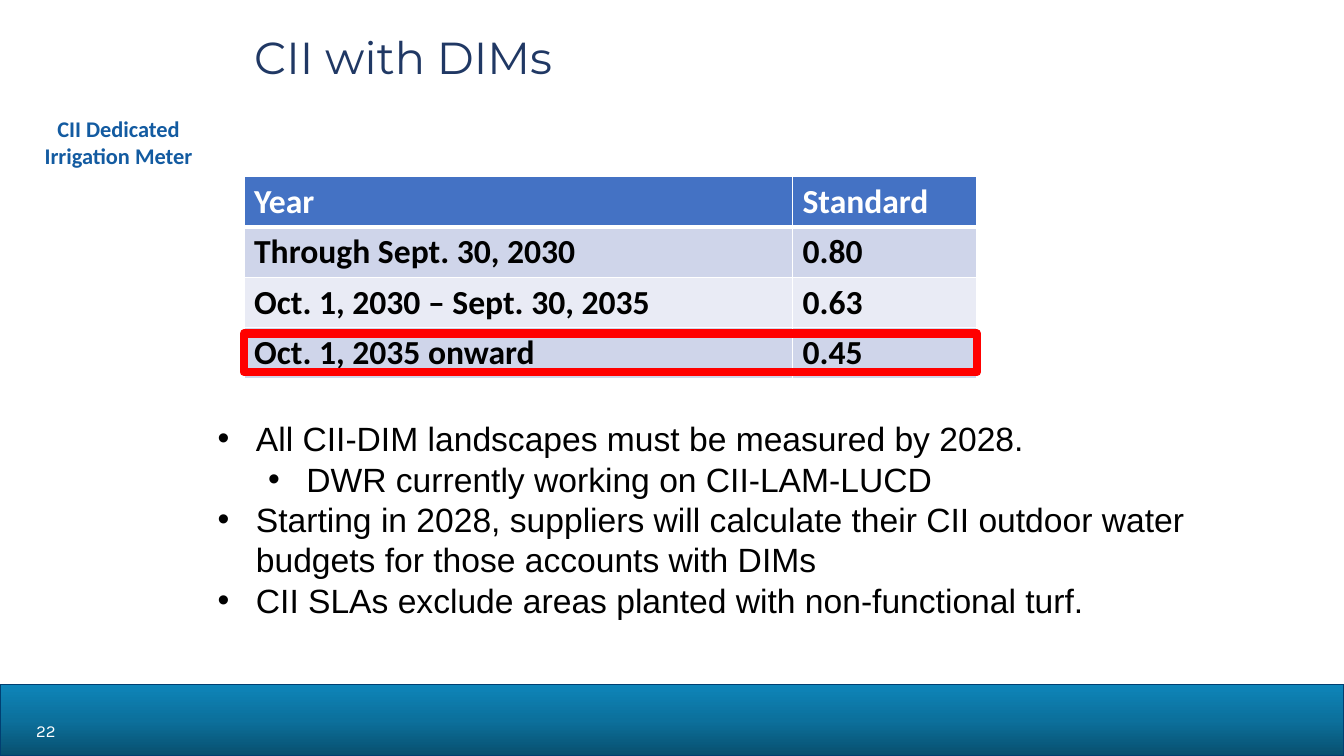
from copy import deepcopy
from dataclasses import dataclass

from lxml.etree import SubElement
from pptx import Presentation
from pptx.dml.color import RGBColor
from pptx.enum.shapes import MSO_SHAPE
from pptx.enum.text import MSO_ANCHOR, PP_ALIGN
from pptx.oxml.ns import qn
from pptx.util import Inches, Pt


@dataclass
class Box:
    left: float
    top: float
    width: float
    height: float

    def emu(self) -> list:
        return [Inches(v) for v in (self.left, self.top, self.width, self.height)]


@dataclass
class Style:
    font: str
    size: float
    color: str
    bold: bool = False


@dataclass
class Bullet:
    text: str
    level: int = 0


@dataclass
class StandardRow:
    cells: tuple
    fill: str
    color: str = "000000"
    bottom_border: float = 1


TITLE = Style("Montserrat", 32, "203864")
BODY = Style("Arial", 24, "000000")
CAPTION = Style("Calibri", 16, "135BA1", True)
PAGE_NUMBER = Style("Karla", 12, "FFFFFF")

STANDARDS = [
    StandardRow(("Year", "Standard"), "4472C4", "FFFFFF", 3),
    StandardRow(("Through Sept. 30, 2030", "0.80"), "CFD5EA"),
    StandardRow(("Oct. 1, 2030 – Sept. 30, 2035", "0.63"), "E9EBF5"),
    StandardRow(("Oct. 1, 2035 onward", "0.45"), "CFD5EA"),
]
COLUMN_WIDTHS = (5.44, 1.83)
ROW_HEIGHT = 0.5

BULLETS = [
    Bullet("All CII-DIM landscapes must be measured by 2028."),
    Bullet("DWR currently working on CII-LAM-LUCD", 1),
    Bullet("Starting in 2028, suppliers will calculate their CII outdoor water "
           "budgets for those accounts with DIMs"),
    Bullet("CII SLAs exclude areas planted with non-functional turf."),
]


def rgb(value: str) -> RGBColor:
    return RGBColor.from_string(value)


def add_run(paragraph, text: str, style: Style) -> None:
    run = paragraph.add_run()
    run.text = text
    run.font.name = style.font
    run.font.size = Pt(style.size)
    run.font.bold = style.bold
    run.font.color.rgb = rgb(style.color)


def add_text_box(slide, box: Box):
    frame = slide.shapes.add_textbox(*box.emu()).text_frame
    frame.word_wrap = True
    return frame


def add_label(slide, box: Box, text: str, style: Style, align) -> None:
    paragraph = add_text_box(slide, box).paragraphs[0]
    paragraph.alignment = align
    add_run(paragraph, text, style)


def add_rectangle(slide, box: Box, line: str, weight: float):
    rectangle = slide.shapes.add_shape(MSO_SHAPE.RECTANGLE, *box.emu())
    rectangle.shadow.inherit = False
    rectangle.line.color.rgb = rgb(line)
    rectangle.line.width = Pt(weight)
    return rectangle


def fill_gradient(shape, colors: tuple) -> None:
    """Spread the colours evenly from the bottom edge to the top."""
    shape.fill.gradient()
    shape.fill.gradient_angle = 90
    stop_list = shape._element.spPr.find(qn("a:gradFill")).find(qn("a:gsLst"))
    stop_list.append(deepcopy(stop_list[-1]))
    for index, (stop, color) in enumerate(zip(shape.fill.gradient_stops, colors)):
        stop.position = index / (len(colors) - 1)
        stop.color.rgb = rgb(color)


def add_borders(cell, bottom: float) -> None:
    properties = cell._tc.get_or_add_tcPr()
    for side, weight in (("L", 1), ("R", 1), ("T", 1), ("B", bottom)):
        line = SubElement(properties, qn(f"a:ln{side}"), w=str(Pt(weight)))
        SubElement(SubElement(line, qn("a:solidFill")), qn("a:srgbClr"), val="FFFFFF")


def add_standards_table(slide, box: Box) -> None:
    table = slide.shapes.add_table(len(STANDARDS), len(COLUMN_WIDTHS), *box.emu()).table
    for column, width in zip(table.columns, COLUMN_WIDTHS):
        column.width = Inches(width)
    for row, standard in zip(table.rows, STANDARDS):
        row.height = Inches(ROW_HEIGHT)
        for cell, text in zip(row.cells, standard.cells):
            add_borders(cell, standard.bottom_border)
            cell.fill.solid()
            cell.fill.fore_color.rgb = rgb(standard.fill)
            add_run(cell.text_frame.paragraphs[0], text,
                    Style("Calibri", 24, standard.color, True))


def add_bullets(slide, box: Box) -> None:
    frame = add_text_box(slide, box)
    for index, bullet in enumerate(BULLETS):
        paragraph = frame.add_paragraph() if index else frame.paragraphs[0]
        paragraph.level = bullet.level
        properties = paragraph._p.get_or_add_pPr()
        properties.set("marL", str(Inches(0.38 + 0.5 * bullet.level)))
        properties.set("indent", str(Inches(-0.38)))
        SubElement(properties, qn("a:buFont"), typeface="Arial")
        SubElement(properties, qn("a:buChar"), char="•")
        add_run(paragraph, bullet.text, BODY)


def set_title(slide, box: Box, text: str) -> None:
    title = slide.shapes.title
    title.left, title.top, title.width, title.height = box.emu()
    title.text_frame.vertical_anchor = MSO_ANCHOR.TOP
    paragraph = title.text_frame.paragraphs[0]
    paragraph.alignment = PP_ALIGN.LEFT
    paragraph.line_spacing = 0.9
    add_run(paragraph, text, TITLE)


def main() -> None:
    presentation = Presentation()
    presentation.slide_width = Inches(13.33)
    presentation.slide_height = Inches(7.5)
    slide = presentation.slides.add_slide(presentation.slide_layouts[5])

    # Footer band and page number
    footer = add_rectangle(slide, Box(0, 6.79, 13.33, 0.71), "013F71", 1)
    fill_gradient(footer, ("084F6E", "0C709C", "0E85B9"))
    add_label(slide, Box(0.18, 7.1, 0.47, 0.32), "22", PAGE_NUMBER, PP_ALIGN.RIGHT)

    # Title, bullets and side caption
    set_title(slide, Box(2.42, 0.3, 10.47, 0.7), "CII with DIMs")
    add_bullets(slide, Box(2.06, 4.1, 10.82, 2.12))
    add_label(slide, Box(0.28, 1.09, 1.79, 0.64), "CII Dedicated Irrigation Meter",
              CAPTION, PP_ALIGN.CENTER)

    # Standards table with the last period highlighted
    table_width = sum(COLUMN_WIDTHS)
    add_standards_table(slide, Box(2.42, 1.75, table_width, ROW_HEIGHT * len(STANDARDS)))
    highlight = add_rectangle(slide, Box(2.42, 3.31, table_width, 0.38), "FF0000", 6)
    highlight.fill.background()

    presentation.save("out.pptx")


if __name__ == "__main__":
    main()
